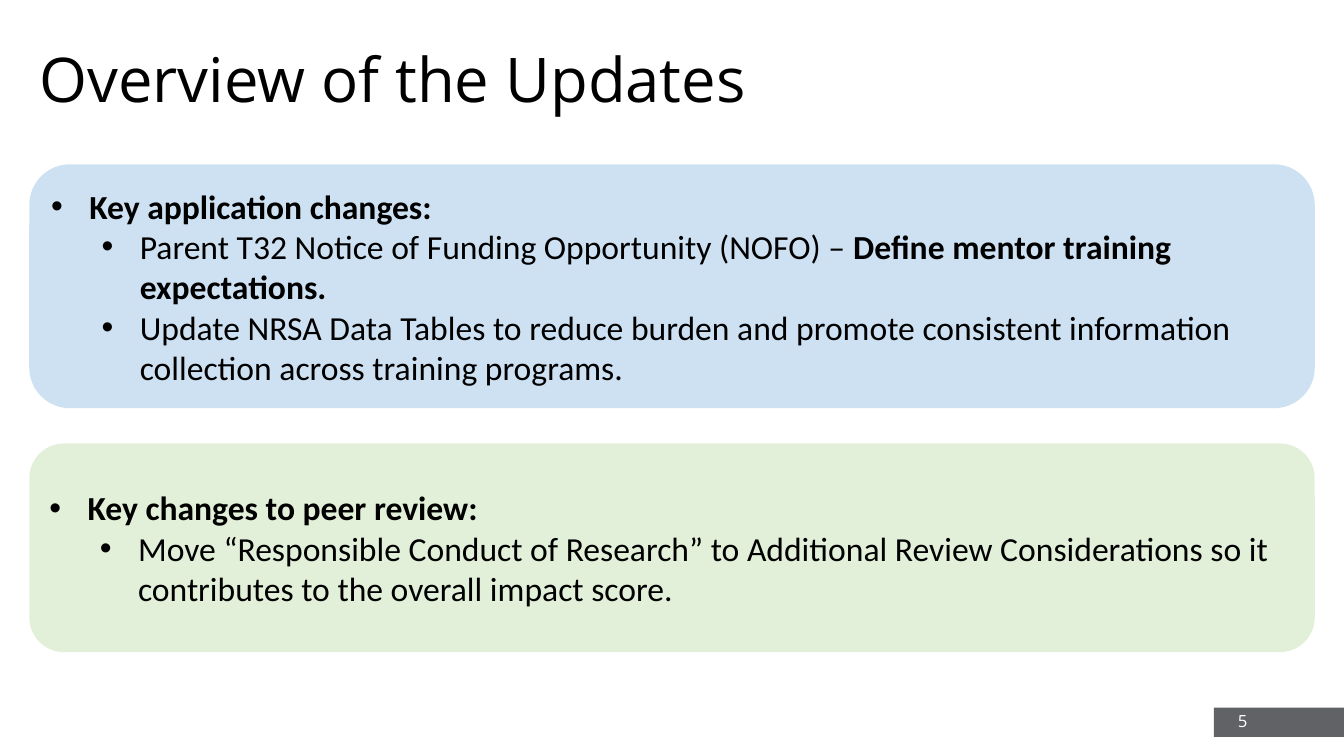
from lxml import etree
from pptx import Presentation
from pptx.dml.color import RGBColor
from pptx.enum.shapes import MSO_SHAPE
from pptx.enum.text import MSO_ANCHOR, PP_ALIGN
from pptx.oxml.ns import qn
from pptx.util import Inches, Pt

RECT, ROUND = MSO_SHAPE.RECTANGLE, MSO_SHAPE.ROUNDED_RECTANGLE
MIDDLE = MSO_ANCHOR.MIDDLE
LEFT, RIGHT = PP_ALIGN.LEFT, PP_ALIGN.RIGHT

BLACK = RGBColor(0x00, 0x00, 0x00)
WHITE = RGBColor(0xFF, 0xFF, 0xFF)
GRAY = RGBColor(0x61, 0x62, 0x65)
BLUE = RGBColor(0xCE, 0xE1, 0xF2)
GREEN = RGBColor(0xE2, 0xF0, 0xD9)

WIDE, HIGH = 13.33, 7.5
EDGE = 0.29
PANEL = WIDE - 2 * EDGE

# Each panel: top, height, fill, then paragraphs of (level, [(text, bold), ...])
PANELS = [
    (1.63, 2.42, BLUE, [
        (0, [("Key application changes:", True)]),
        (1, [("Parent T32 Notice of Funding Opportunity (NOFO) – ", False),
             ("Define mentor training expectations.", True)]),
        (1, [("Update NRSA Data Tables to reduce burden and promote consistent "
              "information collection across training programs.", False)]),
    ]),
    (4.4, 2.07, GREEN, [
        (0, [("Key changes to peer review:", True)]),
        (1, [("Move “Responsible Conduct of Research” to Additional Review "
              "Considerations so it contributes to the overall impact score.", False)]),
    ]),
]


def style(para, face, size, color, align=LEFT):
    para.alignment = align
    font = para.font
    font.name, font.size, font.color.rgb = face, Pt(size), color


def add_block(slide, kind, box, fill):
    block = slide.shapes.add_shape(kind, *map(Inches, box))
    block.shadow.inherit = False
    block.fill.solid()
    block.fill.fore_color.rgb = fill
    block.line.fill.background()
    return block


def add_bullet(para, level):
    para.level = level
    props = para._p.get_or_add_pPr()
    props.set("marL", str(Inches(0.38 + 0.5 * level)))
    props.set("indent", str(Inches(-0.38)))
    etree.SubElement(props, qn("a:buFont")).set("typeface", "Arial")
    etree.SubElement(props, qn("a:buChar")).set("char", "•")


def add_title(slide, box, text):
    title = slide.shapes.title
    title.left, title.top, title.width, title.height = map(Inches, box)
    frame = title.text_frame
    frame.text = text
    frame.vertical_anchor = MIDDLE
    para = frame.paragraphs[0]
    para.line_spacing = 0.9
    style(para, "Open Sans", 44, BLACK)


def add_panel(slide, box, fill, items):
    frame = add_block(slide, ROUND, box, fill).text_frame
    frame.word_wrap = True
    frame.vertical_anchor = MIDDLE
    for i, (level, runs) in enumerate(items):
        para = frame.add_paragraph() if i else frame.paragraphs[0]
        add_bullet(para, level)
        style(para, "Calibri", 24, BLACK)
        for text, bold in runs:
            run = para.add_run()
            run.text = text
            run.font.bold = bold


def add_footer(slide, box, number):
    """Draw the page tag, with the number ending inside it."""
    left, top, width, height = box
    add_block(slide, RECT, box, GRAY)
    label = slide.shapes.add_textbox(
        *map(Inches, (left + width / 3 - 3, top - 0.07, 3, 0.4)))
    frame = label.text_frame
    frame.word_wrap = True
    frame.vertical_anchor = MIDDLE
    para = frame.paragraphs[0]
    para.text = number
    style(para, "Open Sans", 12, WHITE, RIGHT)


def main():
    deck = Presentation()
    deck.slide_width, deck.slide_height = Inches(WIDE), Inches(HIGH)
    slide = deck.slides.add_slide(deck.slide_layouts[5])
    add_footer(slide, (WIDE - 1.29, 7.02, 1.29, 0.29), "5")
    add_title(slide, (EDGE, 0.27, 11.5, 1.1), "Overview of the Updates")
    for top, height, fill, items in PANELS:
        add_panel(slide, (EDGE, top, PANEL, height), fill, items)
    deck.save("out.pptx")


if __name__ == "__main__":
    main()
